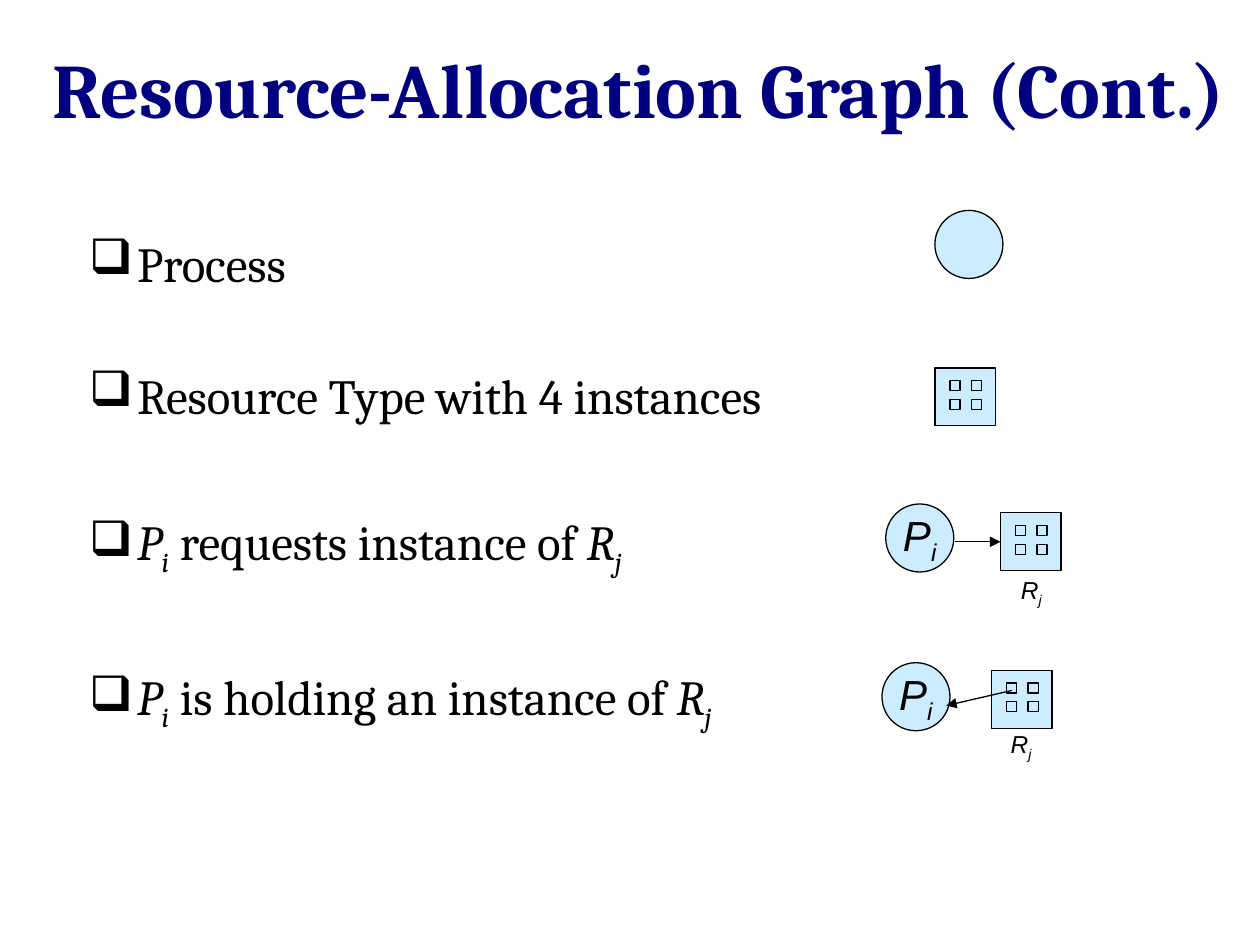
from dataclasses import dataclass
from itertools import product

from lxml.etree import SubElement
from pptx import Presentation
from pptx.dml.color import RGBColor
from pptx.enum.shapes import MSO_CONNECTOR, MSO_SHAPE
from pptx.enum.text import MSO_ANCHOR, PP_ALIGN
from pptx.oxml.ns import qn
from pptx.util import Inches, Pt

NAVY = RGBColor(0x00, 0x00, 0x80)
BLACK = RGBColor(0x00, 0x00, 0x00)
PALE_BLUE = RGBColor(0xCC, 0xEC, 0xFF)

SERIF, SANS = "Cambria", "Arial"
PROCESS_SIZE = 0.54
RESOURCE_WIDTH, RESOURCE_HEIGHT = 0.48, 0.46
INSTANCE_SIZE = 0.08
INSTANCE_OFFSET = (0.12, 0.1)
INSTANCE_PITCH = (0.17, 0.15)
LEFT_SIDE = 1


@dataclass(frozen=True)
class Piece:
    text: str
    italic: bool = False
    subscript: bool = False


@dataclass(frozen=True)
class Item:
    wording: tuple[Piece, ...]
    space_before: float


@dataclass(frozen=True)
class Node:
    left: float
    top: float
    label: tuple[Piece, ...] = ()
    label_at: tuple[float, float] = (0, 0)


P_I = (Piece("P", True), Piece("i", True, True))
R_J = (Piece("R", True), Piece("j", True, True))

ITEMS = (
    Item((Piece("Process"),), 0),
    Item((Piece("Resource Type with 4 instances"),), 42),
    Item((*P_I, Piece(" requests instance of "), *R_J), 50),
    Item((*P_I, Piece(" is holding an instance of "), *R_J), 50),
)
PROCESSES = (Node(7.42, 1.67), Node(7.03, 4, P_I), Node(7, 5.26, P_I))
RESOURCES = (
    Node(7.42, 2.92),
    Node(7.94, 4.07, R_J, (8, 4.53)),
    Node(7.87, 5.32, R_J, (7.92, 5.75)),
)


def add_wording(paragraph, wording: tuple[Piece, ...], size: float, font: str,
                color: RGBColor = BLACK, bold: bool = False) -> None:
    for piece in wording:
        run = paragraph.add_run()
        run.text = piece.text
        run.font.name = font
        run.font.size = Pt(size)
        run.font.color.rgb = color
        run.font.bold = bold
        run.font.italic = piece.italic
        if piece.subscript:
            run.font._element.set("baseline", "-25000")


def add_text_frame(shapes, left: float, top: float, width: float, height: float,
                   wrap: bool = True, anchor: MSO_ANCHOR = MSO_ANCHOR.MIDDLE):
    box = shapes.add_textbox(Inches(left), Inches(top), Inches(width), Inches(height))
    box.text_frame.word_wrap = wrap
    box.text_frame.vertical_anchor = anchor
    return box.text_frame


def add_bullet(paragraph) -> None:
    properties = paragraph._p.get_or_add_pPr()
    properties.set("marL", str(Inches(0.38)))
    properties.set("indent", str(-Inches(0.38)))
    color = SubElement(properties, qn("a:buClr"))
    SubElement(color, qn("a:srgbClr")).set("val", str(BLACK))
    SubElement(properties, qn("a:buChar")).set("char", "❑")


def add_outlined(shapes, kind: MSO_SHAPE, left: float, top: float,
                 width: float, height: float):
    shape = shapes.add_shape(kind, Inches(left), Inches(top), Inches(width), Inches(height))
    shape.shadow.inherit = False
    shape.fill.solid()
    shape.fill.fore_color.rgb = PALE_BLUE
    shape.line.color.rgb = BLACK
    shape.line.width = Pt(0.75)
    return shape


def add_process(shapes, process: Node) -> None:
    circle = add_outlined(shapes, MSO_SHAPE.OVAL, process.left, process.top,
                          PROCESS_SIZE, PROCESS_SIZE)
    if process.label:
        frame = circle.text_frame
        frame.word_wrap = False
        frame.vertical_anchor = MSO_ANCHOR.MIDDLE
        frame.paragraphs[0].alignment = PP_ALIGN.CENTER
        add_wording(frame.paragraphs[0], process.label, 24, SANS)


def add_resource(shapes, resource: Node):
    group = shapes.add_group_shape()
    square = add_outlined(group.shapes, MSO_SHAPE.RECTANGLE, resource.left, resource.top,
                          RESOURCE_WIDTH, RESOURCE_HEIGHT)
    for row, column in product(range(2), repeat=2):
        add_outlined(group.shapes, MSO_SHAPE.RECTANGLE,
                     resource.left + INSTANCE_OFFSET[0] + column * INSTANCE_PITCH[0],
                     resource.top + INSTANCE_OFFSET[1] + row * INSTANCE_PITCH[1],
                     INSTANCE_SIZE, INSTANCE_SIZE)
    if resource.label:
        frame = add_text_frame(shapes, *resource.label_at, 0.37, 0.33, wrap=False)
        frame.paragraphs[0].alignment = PP_ALIGN.CENTER
        add_wording(frame.paragraphs[0], resource.label, 14, SANS)
    return square


def add_arrow(shapes, start: tuple[float, float], end: tuple[float, float]):
    arrow = shapes.add_connector(MSO_CONNECTOR.STRAIGHT,
                                 *(Inches(value) for value in (*start, *end)))
    arrow.line.color.rgb = BLACK
    arrow.line.width = Pt(0.75)
    SubElement(arrow.line._get_or_add_ln(), qn("a:tailEnd")).set("type", "triangle")
    SubElement(arrow._element.spPr, qn("a:effectLst"))
    return arrow


def main() -> None:
    deck = Presentation()
    deck.slide_width, deck.slide_height = Inches(10), Inches(7.5)
    shapes = deck.slides.add_slide(deck.slide_layouts[6]).shapes

    # Title
    title = add_text_frame(shapes, 0.31, 0.38, 9.53, 0.63).paragraphs[0]
    title.alignment = PP_ALIGN.CENTER
    add_wording(title, (Piece("Resource-Allocation Graph (Cont.)"),), 44, SERIF, NAVY, True)

    # Legend text
    legend = add_text_frame(shapes, 0.61, 1.8, 8.03, 4.95, anchor=MSO_ANCHOR.TOP)
    for index, item in enumerate(ITEMS):
        paragraph = legend.add_paragraph() if index else legend.paragraphs[0]
        add_bullet(paragraph)
        if item.space_before:
            paragraph.space_before = Pt(item.space_before)
        add_wording(paragraph, item.wording, 28, SERIF)

    # Graph symbols
    for process in PROCESSES:
        add_process(shapes, process)
    _, requested, _ = [add_resource(shapes, resource) for resource in RESOURCES]

    # Request edge ends at the resource; assignment edge starts at an instance
    request = add_arrow(shapes, (7.58, 4.3), (7.94, 4.3))
    request.end_connect(requested, LEFT_SIDE)
    add_arrow(shapes, (8.03, 5.48), (7.51, 5.6))

    deck.save("out.pptx")


if __name__ == "__main__":
    main()
